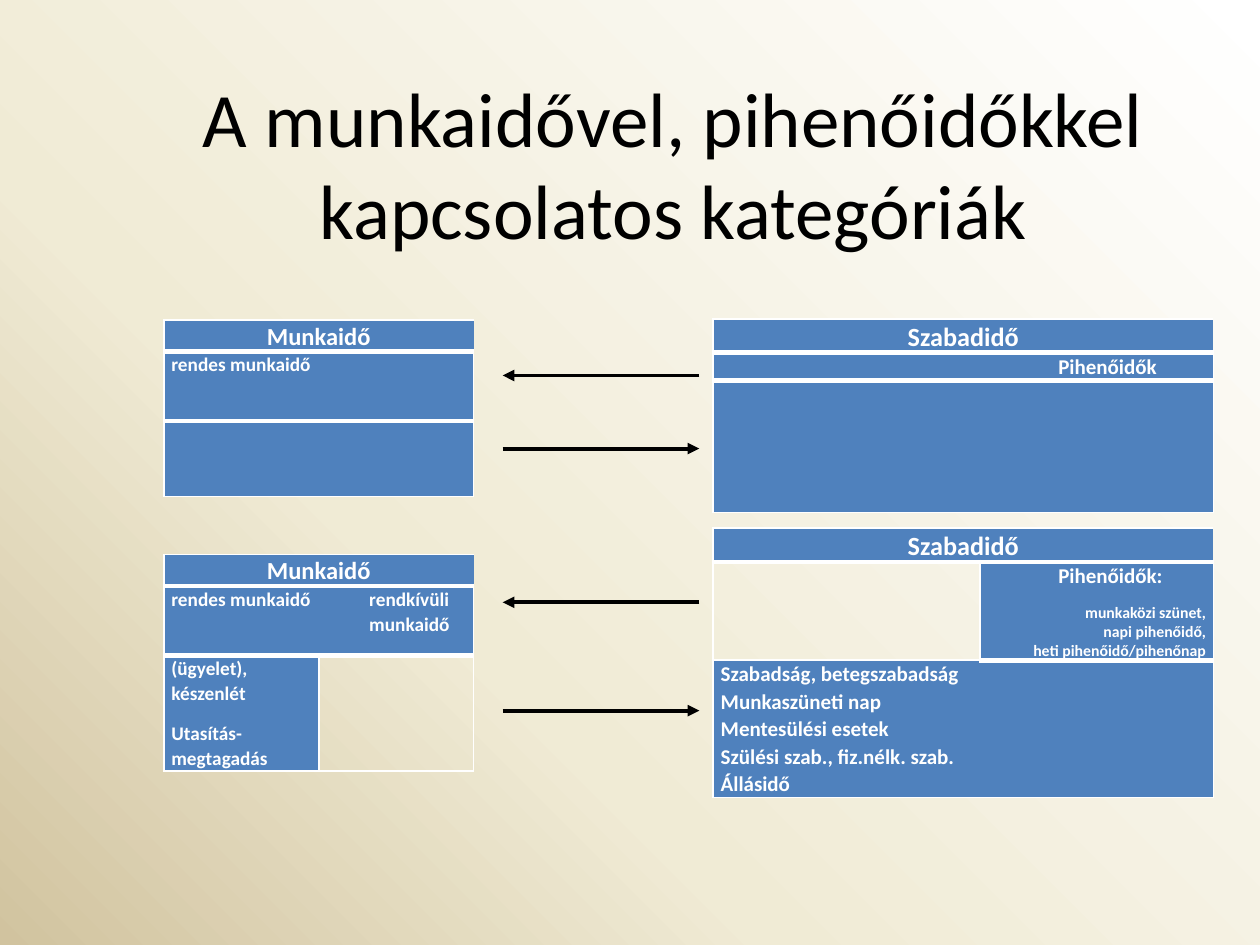
"""Build a slide that sets working time against free time in four linked tables."""
from copy import deepcopy
from dataclasses import dataclass
from typing import Optional

from lxml.etree import SubElement
from pptx import Presentation
from pptx.dml.color import RGBColor
from pptx.enum.shapes import MSO_CONNECTOR
from pptx.enum.text import MSO_ANCHOR, PP_ALIGN
from pptx.oxml.ns import qn
from pptx.slide import Slide
from pptx.table import _Cell
from pptx.util import Inches, Pt

WIDTH, HEIGHT = Inches(10), Inches(7.5)
COLUMN, ROW = WIDTH / 100, HEIGHT / 75
COLORS = {"ink": "000000", "white": "FFFFFF", "block": "4F81BD"}
BACKGROUND = ((0, "FFFFFF"), (0.65, "F0EBD5"), (1, "D1C39F"))
FONT = "Calibri"
PLAIN_TABLE = "{2D5ABB26-0587-4C30-8999-92F81FD0307C}"
SIDES = {"L": (0, -1), "R": (0, 1), "T": (-1, 0), "B": (1, 0)}
THIN, THICK = 1, 3


@dataclass(frozen=True)
class Line:
    text: str
    size: float
    align: PP_ALIGN = PP_ALIGN.JUSTIFY
    indent: float = 0
    spacing: float = 1.07
    after: float = 8


@dataclass(frozen=True)
class TimeTable:
    left: float
    top: float
    columns: tuple[float, float]
    rows: tuple[float, float, float]
    heading: Line
    entries: dict[tuple[int, int], tuple[Line, ...]]
    hollow: Optional[tuple[int, int]] = None


@dataclass(frozen=True)
class Arrow:
    start: float
    end: float
    row: float


WORK = Line("Munkaidő", 14, PP_ALIGN.CENTER)
FREE = Line("Szabadidő", 15, PP_ALIGN.CENTER)
REGULAR = Line("rendes munkaidő", 11)
RESTS = ("munkaközi szünet,", "napi pihenőidő,", "heti pihenőidő/pihenőnap")
ABSENCES = ("Szabadság, betegszabadság", "Munkaszüneti nap", "Mentesülési esetek",
            "Szülési szab., fiz.nélk. szab.", "Állásidő")
WORK_COLUMNS, FREE_COLUMNS = (12.3, 12.3), (21.2, 18.5)

TABLES = (
    TimeTable(13, 25.4, WORK_COLUMNS, (2.5, 5.5, 6), WORK, {(1, 0): (REGULAR,)}),
    TimeTable(56.6, 25.3, FREE_COLUMNS, (2.7, 2.2, 10.5), FREE,
              {(1, 1): (Line("Pihenőidők", 12, indent=5.6),)}),
    TimeTable(13, 44, WORK_COLUMNS, (2.5, 5.5, 9.2), WORK, {
        (1, 0): (REGULAR,),
        (1, 1): (Line("rendkívüli munkaidő", 11, indent=3.4),),
        (2, 0): (Line("(ügyelet), készenlét", 11), Line("Utasítás-megtagadás", 11)),
    }, hollow=(2, 1)),
    TimeTable(56.6, 41.9, FREE_COLUMNS, (2.7, 7.8, 10.9), FREE, {
        (1, 1): (Line("Pihenőidők:", 12, indent=5.6),
                 *(Line(rest, 9, PP_ALIGN.RIGHT, spacing=1, after=0) for rest in RESTS)),
        (2, 0): tuple(Line(absence, 12, after=0) for absence in ABSENCES),
    }, hollow=(1, 0)),
)
ARROWS = tuple(
    Arrow(start, end, row)
    for start, end, rows in ((55.5, 39.9, (29.8, 47.8)), (39.9, 55.5, (35.6, 56.4)))
    for row in rows
)


def paint_background(slide: Slide) -> None:
    fill = slide.background.fill
    fill.gradient()
    fill.gradient_angle = 225
    stop_list = slide.element.find(".//" + qn("a:gsLst"))
    stop_list.append(deepcopy(stop_list[-1]))
    for stop, (position, color) in zip(fill.gradient_stops, BACKGROUND):
        stop.position = position
        stop.color.rgb = RGBColor.from_string(color)


def add_title(slide: Slide, title: str) -> None:
    box = slide.shapes.add_textbox(
        int(12.2 * COLUMN), int(7.3 * ROW), int(82.5 * COLUMN), int(11.2 * ROW))
    frame = box.text_frame
    frame.word_wrap = True
    frame.vertical_anchor = MSO_ANCHOR.MIDDLE
    frame.text = title
    frame.paragraphs[0].alignment = PP_ALIGN.CENTER
    font = frame.paragraphs[0].runs[0].font
    font.name, font.size = FONT, Pt(44)
    font.color.rgb = RGBColor.from_string(COLORS["ink"])


def write_lines(cell: _Cell, lines: tuple[Line, ...]) -> None:
    cell.text_frame.text = "\n".join(line.text for line in lines)
    for paragraph, line in zip(cell.text_frame.paragraphs, lines):
        paragraph.alignment = line.align
        paragraph.line_spacing = line.spacing
        paragraph.space_after = Pt(line.after)
        paragraph._p.get_or_add_pPr().set("marL", str(int(line.indent * COLUMN)))
        for run in paragraph.runs:
            run.font.name, run.font.size, run.font.bold = FONT, Pt(line.size), True
            run.font.color.rgb = RGBColor.from_string(COLORS["white"])
    if not lines:
        SubElement(cell.text_frame.paragraphs[0]._p, qn("a:endParaRPr"), sz="800")


def border_weight(plan: TimeTable, place: tuple[int, int], side: str) -> int:
    step = SIDES[side]
    neighbour = (place[0] + step[0], place[1] + step[1])
    if not (0 <= neighbour[0] < len(plan.rows) and 0 <= neighbour[1] < len(plan.columns)):
        return THIN
    lower = max(place, neighbour)
    if step[0] and (lower[0] == 1 or lower == plan.hollow):
        return THICK
    return THIN if plan.hollow in (place, neighbour) else 0


def draw_borders(cell: _Cell, plan: TimeTable, place: tuple[int, int]) -> None:
    properties = cell._tc.get_or_add_tcPr()
    for side in SIDES:
        weight = border_weight(plan, place, side)
        if weight:
            border = SubElement(properties, qn(f"a:ln{side}"), w=str(Pt(weight)))
            solid = SubElement(border, qn("a:solidFill"))
            SubElement(solid, qn("a:srgbClr"), val=COLORS["white"])


def add_time_table(slide: Slide, plan: TimeTable) -> None:
    frame = slide.shapes.add_table(
        len(plan.rows), len(plan.columns), int(plan.left * COLUMN), int(plan.top * ROW),
        int(sum(plan.columns) * COLUMN), int(sum(plan.rows) * ROW))
    table = frame.table
    table._tbl.tblPr.find(qn("a:tableStyleId")).text = PLAIN_TABLE
    for column, width in zip(table.columns, plan.columns):
        column.width = int(width * COLUMN)
    for row, height in zip(table.rows, plan.rows):
        row.height = int(height * ROW)
    table.cell(0, 0).merge(table.cell(0, 1))
    entries = {(0, 0): (plan.heading,), **plan.entries}
    for r in range(len(plan.rows)):
        for c in range(len(plan.columns)):
            cell = table.cell(r, c)
            cell.margin_left = cell.margin_right = int(0.6 * COLUMN)
            cell.margin_top = cell.margin_bottom = 0
            write_lines(cell, entries.get((r, c), ()))
            draw_borders(cell, plan, (r, c))
            if (r, c) == plan.hollow:
                cell.fill.background()
            else:
                cell.fill.solid()
                cell.fill.fore_color.rgb = RGBColor.from_string(COLORS["block"])


def add_arrow(slide: Slide, arrow: Arrow) -> None:
    height = int(arrow.row * ROW)
    connector = slide.shapes.add_connector(
        MSO_CONNECTOR.STRAIGHT, int(arrow.start * COLUMN), height,
        int(arrow.end * COLUMN), height)
    connector.line.width = Pt(2.25)
    connector.line.color.rgb = RGBColor.from_string(COLORS["ink"])
    SubElement(connector.line._get_or_add_ln(), qn("a:tailEnd"), type="triangle")
    SubElement(connector._element.spPr, qn("a:effectLst"))


def main() -> None:
    presentation = Presentation()
    presentation.slide_width, presentation.slide_height = WIDTH, HEIGHT
    slide = presentation.slides.add_slide(presentation.slide_layouts[6])
    paint_background(slide)
    add_title(slide, "A munkaidővel, pihenőidőkkel kapcsolatos kategóriák")
    for plan in TABLES:
        add_time_table(slide, plan)
    for arrow in ARROWS:
        add_arrow(slide, arrow)
    presentation.save("out.pptx")


if __name__ == "__main__":
    main()
